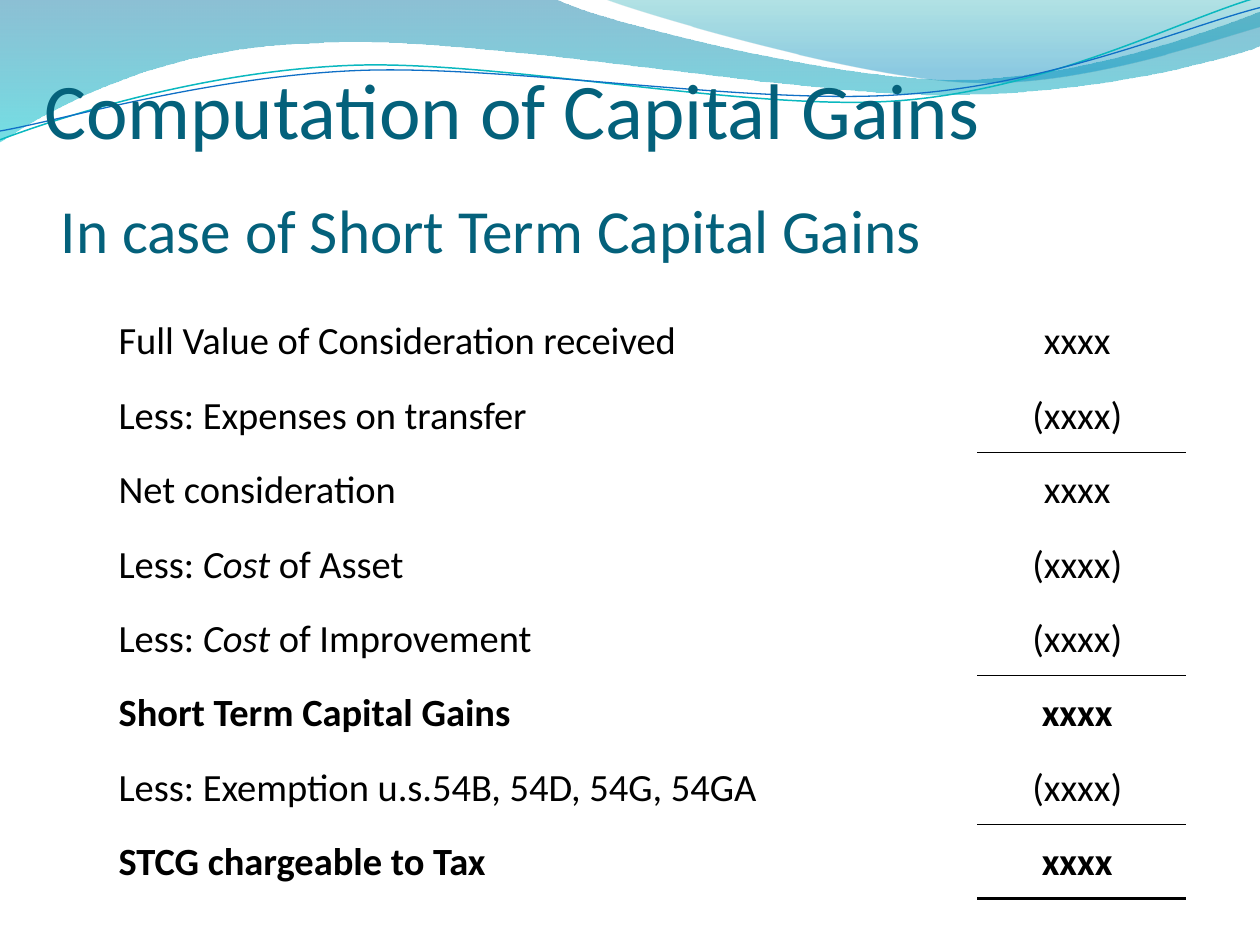
from math import cos, radians, sin

from pptx import Presentation
from pptx.dml.color import RGBColor
from pptx.enum.text import MSO_ANCHOR, PP_ALIGN
from pptx.oxml import parse_xml
from pptx.oxml.ns import nsdecls, qn
from pptx.util import Pt

FONT = "Calibri"
TITLE_COLOR = RGBColor(0x04, 0x61, 0x7B)
BLACK = RGBColor(0, 0, 0)
POINTS_PER_INCH = 72
WAVE_ROTATION = 357.3

HEADINGS = [
    ("Computation of Capital Gains", 45, (25.2, 20.5, 648, 68.4), (0, 3.6, 0, 0), MSO_ANCHOR.BOTTOM),
    ("In case of Short Term Capital Gains", 35, (31.1, 105.4, 578, 51.1), (3.6, 0, 3.6, 0), MSO_ANCHOR.MIDDLE),
]

ROWS = [
    ("Full Value of Consideration received", "xxxx ", False, 0),
    ("Less: Expenses on transfer", "(xxxx) ", False, 0.5),
    ("Net consideration", "xxxx ", False, 0),
    ("Less: *Cost* of Asset", "(xxxx) ", False, 0),
    ("Less: *Cost* of Improvement", "(xxxx) ", False, 0.5),
    ("Short Term Capital Gains", "xxxx ", True, 0),
    ("Less: Exemption u.s.54B, 54D, 54G, 54GA", "(xxxx) ", False, 0.5),
    ("STCG chargeable to Tax", "xxxx ", True, 2),
]
COLUMN_WIDTHS = (527.3, 119.3)
ROW_HEIGHT = 42.5

BANDS = [
    ((-0.01, -0.01, 10.02, 1.14),
     [(0, 0), (4.4, -0.01), (4.76, 0.17, 6.64, 0.63, 7.58, 0.63), (8.53, 0.63, 9.58, 0.26, 10, 0.09),
      (10.01, 0.36), (9.83, 0.44, 8.7, 0.76, 7.46, 0.75), (6.22, 0.75, 3.82, 0.28, 2.57, 0.34),
      (1.29, 0.36, 0.46, 0.83, -0.01, 1.13), (0, 0)],
     [(0, RGBColor(0x00, 0x74, 0xA1), 45), (1, RGBColor(0x00, 0xC6, 0xCF), 55)]),
    ((4.79, -0.01, 5.21, 0.7),
     [(4.79, -0.01), (5.09, 0.11, 6.82, 0.62, 7.69, 0.65), (8.56, 0.69, 9.61, 0.32, 10, 0.21),
      (10, 0), (4.79, -0.01)],
     [(0, RGBColor(0x00, 0xA1, 0xA9), 30), (0.8, RGBColor(0x00, 0x8B, 0xBF), 45)]),
]
WAVES = [
    ((-0.02, 0.22, 10.02, 0.71),
     [(0, 1.11), (0.48, 0.93, 1.58, 0.57, 2.77, 0.52), (3.95, 0.47, 5.93, 0.89, 7.13, 0.8),
      (8.33, 0.71, 9.38, 0.15, 9.98, -0.02)], RGBColor(0x0A, 0xB8, 0xBF), 0.85),
    ((-0.02, 0.3, 10.03, 0.58),
     [(0, 1.04), (0.47, 0.96, 1.64, 0.61, 2.83, 0.56), (4.03, 0.51, 5.97, 0.84, 7.17, 0.75),
      (8.36, 0.67, 9.41, 0.21, 10, 0.06)], RGBColor(0x0F, 0x6F, 0xC6), 0.75),
]


def to_local(step, box, rotation):
    left, top, width, height = box
    angle = radians(-rotation)
    points = []
    for x, y in zip(step[::2], step[1::2]):
        across, down = x - left - width / 2, y - top - height / 2
        points.append((
            Pt((width / 2 + across * cos(angle) - down * sin(angle)) * POINTS_PER_INCH),
            Pt((height / 2 + across * sin(angle) + down * cos(angle)) * POINTS_PER_INCH)))
    return points


def add_outline(slide, box, outline, close, rotation=0):
    steps = [to_local(step, box, rotation) for step in outline]
    builder = slide.shapes.build_freeform(*steps[0][-1])
    builder.add_line_segments([step[-1] for step in steps[1:]], close=close)
    shape = builder.convert_to_shape()
    shape.left, shape.top, shape.width, shape.height = (Pt(length * POINTS_PER_INCH) for length in box)
    shape.rotation = rotation
    shape.shadow.inherit = False
    drawing = next(shape._element.spPr.iter(qn("a:path")))
    drawing.set("w", str(shape.width))
    drawing.set("h", str(shape.height))
    for element, points in zip(list(drawing), steps):
        tag = "moveTo" if points is steps[0] else "cubicBezTo" if len(points) == 3 else "lnTo"
        markup = "".join(f'<a:pt x="{x}" y="{y}"/>' for x, y in points)
        drawing.replace(element, parse_xml(f'<a:{tag} {nsdecls("a")}>{markup}</a:{tag}>'))
    return shape


def add_band(slide, box, outline, stops):
    shape = add_outline(slide, box, outline, True)
    shape.line.fill.background()
    shape.fill.gradient()
    shape.fill.gradient_angle = 270
    for stop, (position, color, _) in zip(shape.fill.gradient_stops, stops):
        stop.position = position
        stop.color.rgb = color
    for element, (_, _, opacity) in zip(shape._element.spPr.iter(qn("a:srgbClr")), stops):
        element.append(parse_xml(f'<a:alpha {nsdecls("a")} val="{opacity * 1000}"/>'))


def add_wave(slide, box, outline, color, width):
    shape = add_outline(slide, box, outline, False, WAVE_ROTATION)
    shape.fill.background()
    shape.line.color.rgb = color
    shape.line.width = Pt(width)


def set_font(paragraph, size, color, bold=False):
    font = paragraph.font
    font.name, font.size, font.bold = FONT, Pt(size), bold
    font.color.rgb = color


def add_heading(slide, text, size, box, margins, anchor):
    frame = slide.shapes.add_textbox(*map(Pt, box)).text_frame
    frame.word_wrap = True
    frame.vertical_anchor = anchor
    frame.margin_left, frame.margin_top, frame.margin_right, frame.margin_bottom = map(Pt, margins)
    paragraph = frame.paragraphs[0]
    paragraph.text = text
    set_font(paragraph, size, TITLE_COLOR)


def fill_cell(cell, text, bold):
    cell.fill.background()
    cell.vertical_anchor = MSO_ANCHOR.MIDDLE
    cell.margin_left = cell.margin_top = cell.margin_right = Pt(0.7)
    cell.margin_bottom = 0
    paragraph = cell.text_frame.paragraphs[0]
    for index, part in enumerate(text.split("*")):
        run = paragraph.add_run()
        run.text = part
        if index % 2:
            run.font.italic = True
    set_font(paragraph, 22, BLACK, bold)
    return paragraph


def set_borders(cell, top, bottom):
    properties = cell._tc.get_or_add_tcPr()
    for index, (tag, width) in enumerate((("lnL", 0), ("lnR", 0), ("lnT", top), ("lnB", bottom))):
        paint = f'<a:solidFill><a:srgbClr val="{BLACK}"/></a:solidFill>' if width else "<a:noFill/>"
        properties.insert(index, parse_xml(
            f'<a:{tag} {nsdecls("a")} w="{Pt(width)}">{paint}</a:{tag}>'))


def add_computation(slide):
    table = slide.shapes.add_table(
        len(ROWS), 2, Pt(31.1), Pt(173.7), Pt(sum(COLUMN_WIDTHS)), Pt(ROW_HEIGHT * len(ROWS))).table
    table.first_row = table.horz_banding = False
    for column, width in zip(table.columns, COLUMN_WIDTHS):
        column.width = Pt(width)
    rule_above = 0
    for index, (label, amount, bold, rule_below) in enumerate(ROWS):
        table.rows[index].height = Pt(ROW_HEIGHT)
        label_cell, amount_cell = table.cell(index, 0), table.cell(index, 1)
        paragraph = fill_cell(label_cell, label, bold)
        paragraph.level = 1
        properties = paragraph._p.get_or_add_pPr()
        properties.set("marL", str(Pt(36)))
        properties.set("indent", "0")
        fill_cell(amount_cell, amount, bold).alignment = PP_ALIGN.CENTER
        set_borders(label_cell, 0, 0)
        set_borders(amount_cell, rule_above, rule_below)
        rule_above = rule_below


def main():
    presentation = Presentation()
    presentation.slide_width, presentation.slide_height = Pt(720), Pt(540)
    slide = presentation.slides.add_slide(presentation.slide_layouts[6])
    for band in BANDS:
        add_band(slide, *band)
    for wave in WAVES:
        add_wave(slide, *wave)
    for heading in HEADINGS:
        add_heading(slide, *heading)
    add_computation(slide)
    presentation.save("out.pptx")


if __name__ == "__main__":
    main()
